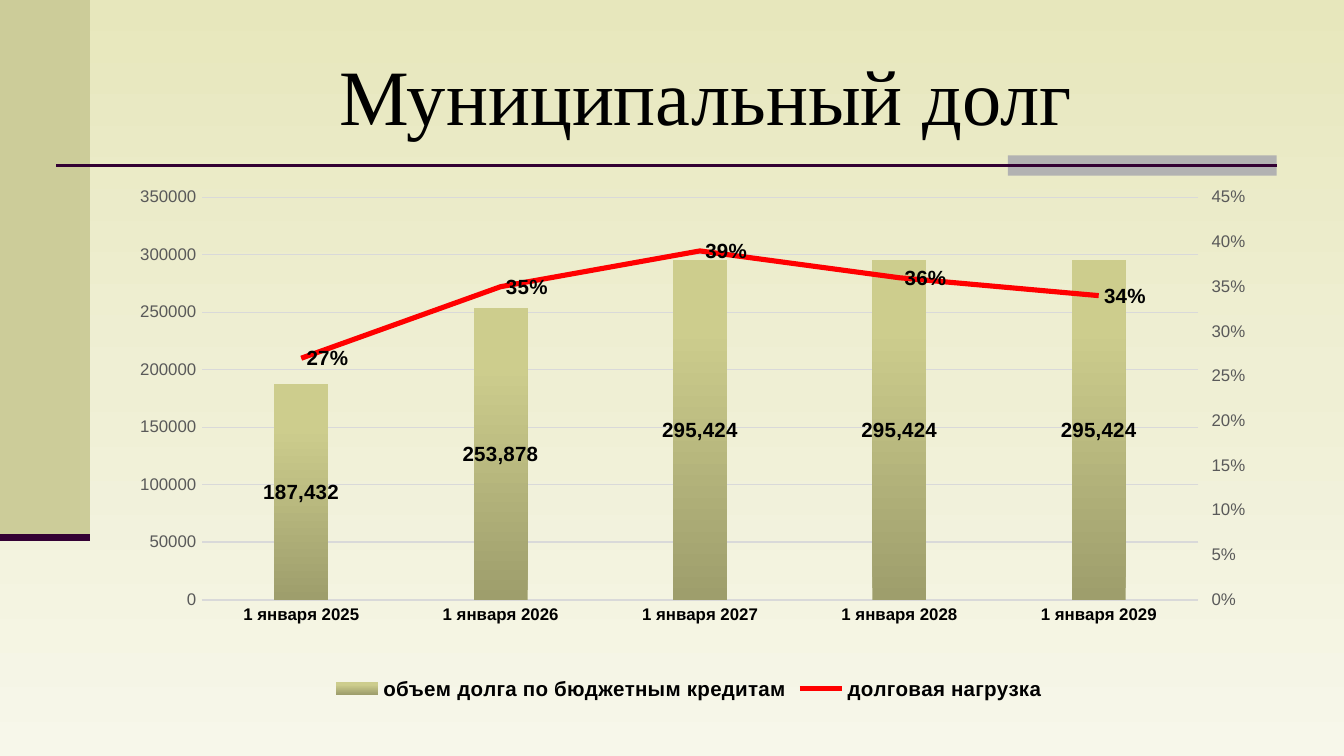
from dataclasses import dataclass

from lxml import etree
from pptx import Presentation
from pptx.chart.axis import ValueAxis
from pptx.chart.data import CategoryChartData
from pptx.dml.color import RGBColor
from pptx.enum.chart import (XL_CHART_TYPE, XL_LABEL_POSITION, XL_LEGEND_POSITION,
                             XL_MARKER_STYLE, XL_TICK_MARK)
from pptx.enum.shapes import MSO_CONNECTOR, MSO_SHAPE
from pptx.enum.text import MSO_ANCHOR, PP_ALIGN
from pptx.oxml import parse_xml
from pptx.oxml.ns import nsdecls, qn
from pptx.util import Cm, Pt

COLORS = {
    "text": "000000", "axis": "595959", "grid": "D9D9D9", "load": "FF0000",
    "band": "CCCC99", "accent": "B2B2B2", "rule": "330033",
}
BACKGROUND = [(0, "E7E7BC"), (50, "EFEFD4"), (100, "F7F7EA")]
DEBT_FILL = [(0, "9E9E6C"), (80, "CDCD8D"), (100, "CFCF8C")]
YEARS = range(2025, 2030)
DEBT = [187432, 253878, 295424, 295424, 295424]
LOAD = [0.27, 0.35, 0.39, 0.36, 0.34]


@dataclass
class Block:
    x: float
    y: float
    w: float
    h: float
    color: str


@dataclass
class Rule:
    x1: float
    x2: float
    y: float
    width: float


def rgb(name: str) -> RGBColor:
    return RGBColor.from_string(COLORS[name])


def draw_block(s, b: Block):
    sp = s.shapes.add_shape(MSO_SHAPE.RECTANGLE, Cm(b.x), Cm(b.y), Cm(b.w), Cm(b.h))
    sp.shadow.inherit = False
    sp.fill.solid()
    sp.fill.fore_color.rgb = rgb(b.color)
    sp.line.fill.background()
    return sp


def draw_rule(s, rule: Rule):
    cx = s.shapes.add_connector(MSO_CONNECTOR.STRAIGHT, Cm(rule.x1), Cm(rule.y),
                                Cm(rule.x2), Cm(rule.y))
    cx.line.color.rgb = rgb("rule")
    cx.line.width = Pt(rule.width)
    etree.SubElement(cx._element.spPr, qn("a:effectLst"))
    return cx


def set_gradient(fill, owner, stops: list, angle: int) -> None:
    fill.gradient()
    fill.gradient_angle = angle
    gs_list = next(owner.iter(qn("a:gsLst")))
    for gs in list(gs_list):
        gs_list.remove(gs)
    for pos, color in stops:
        gs = etree.SubElement(gs_list, qn("a:gs"), pos=str(pos * 1000))
        etree.SubElement(gs, qn("a:srgbClr"), val=color)


def set_font(font, size: float, color: str = "text", bold: bool = False) -> None:
    font.name = "Arial"
    font.size = Pt(size)
    font.bold = bold
    font.color.rgb = rgb(color)


def add_labels(series, number_format: str, position) -> None:
    labels = series.data_labels
    labels.show_value = True
    labels.number_format = number_format
    labels.number_format_is_linked = False
    labels.position = position
    set_font(labels.font, 11, bold=True)


def format_value_axis(axis, top: float, step: float, number_format: str) -> None:
    axis.minimum_scale = 0
    axis.maximum_scale = top
    axis.major_unit = step
    axis.tick_labels.number_format = number_format
    axis.tick_labels.number_format_is_linked = False
    axis.format.line.fill.background()
    set_font(axis.tick_labels.font, 9, "axis")


def move_to_right_axis(plot_area, ser):
    for invert in ser.findall(qn("c:invertIfNegative")):
        ser.remove(invert)
    line = parse_xml(
        f'<c:lineChart {nsdecls("c")}><c:grouping val="standard"/><c:varyColors val="0"/>'
        '<c:marker val="1"/><c:axId val="5001"/><c:axId val="5002"/></c:lineChart>')
    line.insert(2, ser)
    plot_area.find(qn("c:barChart")).addnext(line)
    cat_axis = parse_xml(
        f'<c:catAx {nsdecls("c")}><c:axId val="5001"/>'
        '<c:scaling><c:orientation val="minMax"/></c:scaling><c:delete val="1"/>'
        '<c:axPos val="b"/><c:crossAx val="5002"/><c:crosses val="autoZero"/></c:catAx>')
    right_axis = parse_xml(
        f'<c:valAx {nsdecls("c")}><c:axId val="5002"/>'
        '<c:scaling><c:orientation val="minMax"/></c:scaling><c:delete val="0"/>'
        '<c:axPos val="r"/><c:majorTickMark val="out"/><c:minorTickMark val="none"/>'
        '<c:tickLblPos val="nextTo"/><c:crossAx val="5001"/><c:crosses val="max"/>'
        '<c:crossBetween val="between"/></c:valAx>')
    plot_area.findall(qn("c:valAx"))[-1].addnext(cat_axis)
    cat_axis.addnext(right_axis)
    return ValueAxis(right_axis)


def set_plot_layout(plot_area, x: float, y: float, w: float, h: float) -> None:
    for old in plot_area.findall(qn("c:layout")):
        plot_area.remove(old)
    sizes = "".join(f'<c:{k} val="{v}"/>' for k, v in zip("xywh", (x, y, w, h)))
    plot_area.insert(0, parse_xml(
        f'<c:layout {nsdecls("c")}><c:manualLayout><c:layoutTarget val="inner"/>'
        f'<c:xMode val="edge"/><c:yMode val="edge"/>{sizes}</c:manualLayout></c:layout>'))


def draw_chart(s) -> None:
    data = CategoryChartData()
    data.categories = [f"1 января {year}" for year in YEARS]
    data.add_series("объем долга по бюджетным кредитам", DEBT, "#,##0")
    data.add_series("долговая нагрузка", LOAD, "0%")
    chart = s.shapes.add_chart(XL_CHART_TYPE.COLUMN_CLUSTERED, Cm(2.31), Cm(3.33),
                               Cm(21.41), Cm(10.01), data).chart
    set_font(chart.font, 10)
    chart.has_title = False
    chart.has_legend = True
    chart.legend.position = XL_LEGEND_POSITION.BOTTOM
    chart.legend.include_in_layout = False
    set_font(chart.legend.font, 11, bold=True)

    cat_axis, val_axis = chart.category_axis, chart.value_axis
    cat_axis.major_tick_mark = val_axis.major_tick_mark = XL_TICK_MARK.NONE
    cat_axis.format.line.color.rgb = rgb("grid")
    cat_axis.format.line.width = Pt(1)
    set_font(cat_axis.tick_labels.font, 9, bold=True)
    format_value_axis(val_axis, 350000, 50000, "0")
    val_axis.major_gridlines.format.line.color.rgb = rgb("grid")
    val_axis.major_gridlines.format.line.width = Pt(0.75)

    columns = chart.plots[0]
    columns.gap_width = 269
    columns.vary_by_categories = False
    debt, load = columns.series
    set_gradient(debt.format.fill, debt._element, DEBT_FILL, 90)
    add_labels(debt, "#,##0", XL_LABEL_POSITION.CENTER)

    plot_area = next(chart.element.iter(qn("c:plotArea"))) if hasattr(chart, "element") \
        else next(chart._chartSpace.iter(qn("c:plotArea")))
    right_axis = move_to_right_axis(plot_area, load._element)
    format_value_axis(right_axis, 0.45, 0.05, "0%")
    set_plot_layout(plot_area, 0.07, 0.04, 0.88, 0.76)
    load = chart.plots[1].series[0]
    load.smooth = False
    load.marker.style = XL_MARKER_STYLE.NONE
    load.format.line.color.rgb = rgb("load")
    load.format.line.width = Pt(2.75)
    add_labels(load, "0%", XL_LABEL_POSITION.RIGHT)


def draw_title(s, text: str) -> None:
    tf = s.shapes.add_textbox(Cm(2.54), Cm(0.58), Cm(21.59), Cm(2.39)).text_frame
    tf.word_wrap = True
    tf.vertical_anchor = MSO_ANCHOR.MIDDLE
    tf.text = text
    p = tf.paragraphs[0]
    p.alignment = PP_ALIGN.CENTER
    r = p.runs[0]
    r.font.name = "Times New Roman"
    r.font.size = Pt(42)
    r.font.color.rgb = rgb("text")


def main() -> None:
    prs = Presentation()
    prs.slide_width, prs.slide_height = Cm(25.4), Cm(14.29)
    s = prs.slides.add_slide(prs.slide_layouts[6])
    set_gradient(s.background.fill, s.element, BACKGROUND, 270)
    draw_block(s, Block(0, 0, 1.7, 10.16, "band"))
    accent = draw_block(s, Block(19.05, 2.94, 5.08, 0.38, "accent"))
    draw_rule(s, Rule(1.06, 24.13, 3.13, 1.5)).end_connect(accent, 3)
    draw_rule(s, Rule(0, 1.7, 10.16, 3.5))
    draw_title(s, "Муниципальный долг")
    draw_chart(s)
    prs.save("out.pptx")


if __name__ == "__main__":
    main()
